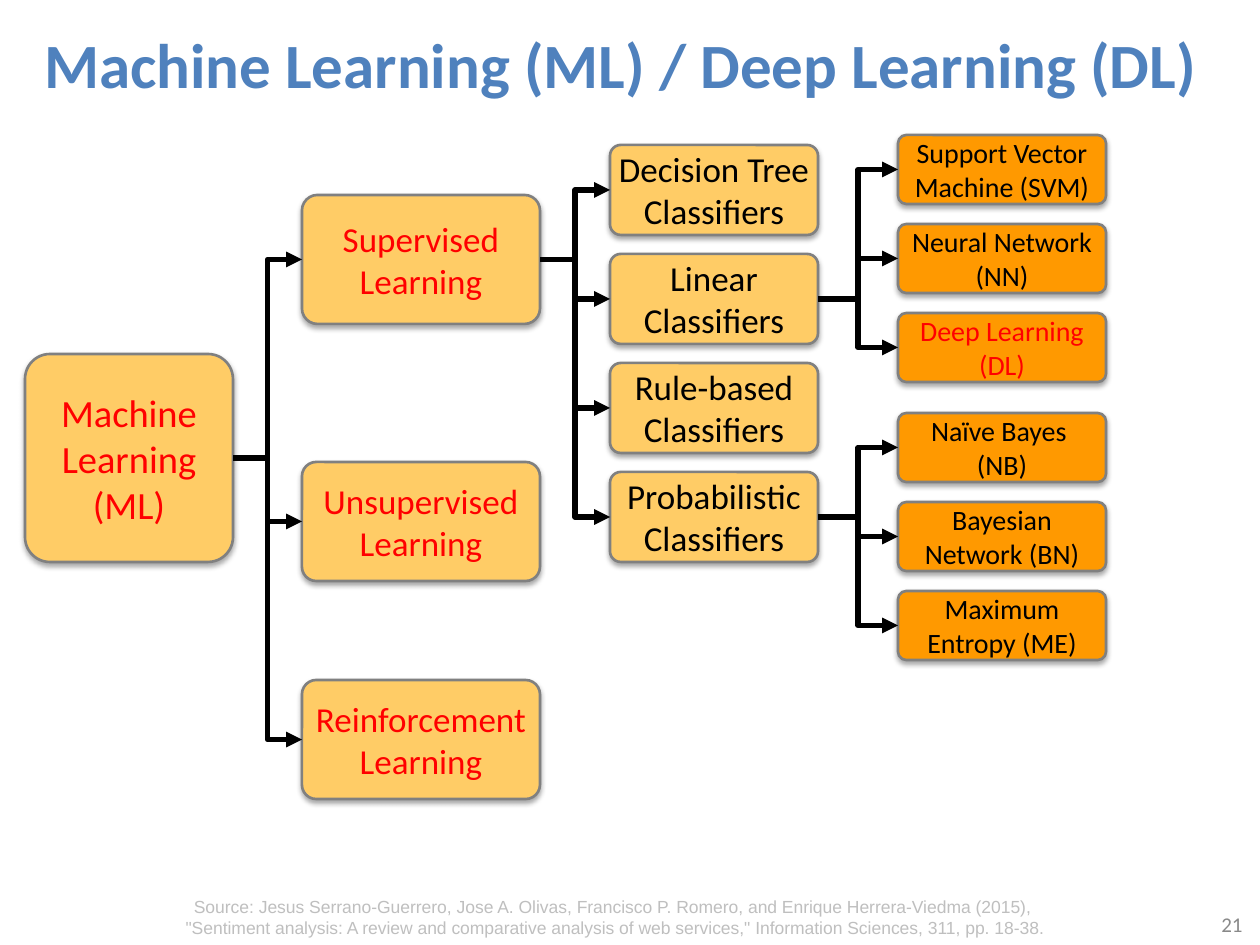
from copy import deepcopy

from lxml.etree import SubElement
from pptx import Presentation
from pptx.dml.color import RGBColor
from pptx.enum.shapes import MSO_CONNECTOR, MSO_SHAPE
from pptx.enum.text import MSO_ANCHOR, MSO_AUTO_SIZE, PP_ALIGN
from pptx.oxml.ns import qn
from pptx.util import Emu, Pt

EMU_PER_PX = 914400 / 126
LEFT_SITE, RIGHT_SITE = 1, 3
BLACK, RED, GRAY = "000000", "FF0000", "808080"
YELLOW, ORANGE = "FFCC66", "FF9900"

# Format of the boxes in each column of the tree
ROOT = dict(left=25, width=208, height=208, fill=YELLOW, size=22, color=RED)
KIND = dict(left=302, width=238, height=119, fill=YELLOW, size=20, color=RED)
CLASSIFIER = dict(left=610, width=208, height=90, fill=YELLOW, size=20, color=BLACK)
METHOD = dict(left=898, width=208, height=69, fill=ORANGE, size=16, color=BLACK)

CLASSIFIERS = ["Decision Tree Classifiers", "Linear Classifiers",
               "Rule-based Classifiers", "Probabilistic Classifiers"]
LINEAR_METHODS = ["Support Vector Machine (SVM)", "Neural Network (NN)",
                  "Deep Learning (DL)"]
PROBABILISTIC_METHODS = ["Naïve Bayes \v(NB)", "Bayesian Network (BN)",
                         "Maximum Entropy (ME)"]
SOURCE = ("Source: Jesus Serrano-Guerrero, Jose A. Olivas, Francisco P. Romero, "
          "and Enrique Herrera-Viedma (2015), \v"
          "\"Sentiment analysis: A review and comparative analysis of web services,\" "
          "Information Sciences, 311, pp. 18-38.")


def px(length):
    return Emu(round(length * EMU_PER_PX))


def rgb(color):
    return RGBColor.from_string(color)


def write_text(shape, text, *, size, color, font="Calibri", bold=False,
               align=PP_ALIGN.CENTER, anchor=MSO_ANCHOR.MIDDLE, inset=None):
    """Fill a shape with text; \\n starts a paragraph and \\v breaks a line."""
    frame = shape.text_frame
    frame.text = text
    frame.word_wrap = True
    frame.auto_size = MSO_AUTO_SIZE.NONE
    frame.vertical_anchor = anchor
    if inset is not None:
        frame.margin_left = frame.margin_right = px(inset)
        frame.margin_top = frame.margin_bottom = px(inset)
    for paragraph in frame.paragraphs:
        paragraph.alignment = align
        for run in paragraph.runs:
            run.font.name = font
            run.font.size = Pt(size)
            run.font.bold = bold
            run.font.color.rgb = rgb(color)
        for line_break in paragraph._p.findall(qn("a:br")):
            line_break.append(deepcopy(paragraph.runs[0]._r.rPr))


def add_title(slide, text):
    title = slide.shapes.title
    title.left, title.top, title.width, title.height = map(px, (25, 11, 1191, 105))
    write_text(title, text, size=36, color="4F81BD", bold=True)


def add_label(slide, text, left, top, width, height, **text_format):
    label = slide.shapes.add_textbox(px(left), px(top), px(width), px(height))
    write_text(label, text, **text_format)


def add_soft_shadow(shape):
    shape.shadow.inherit = False
    effects = shape._element.spPr.find(qn("a:effectLst"))
    shadow = SubElement(effects, qn("a:outerShdw"), blurRad=str(Pt(3.1)),
                        dist=str(Pt(1.8)), dir="5400000", rotWithShape="0")
    color = SubElement(shadow, qn("a:srgbClr"), val=BLACK)
    SubElement(color, qn("a:alpha"), val="35000")


def add_box(slide, text, top, *, left, width, height, fill, size, color):
    box = slide.shapes.add_shape(MSO_SHAPE.ROUNDED_RECTANGLE,
                                 px(left), px(top), px(width), px(height))
    box.adjustments[0] = 0.12
    box.fill.solid()
    box.fill.fore_color.rgb = rgb(fill)
    box.line.color.rgb = rgb(GRAY)
    box.line.width = Pt(1.5)
    add_soft_shadow(box)
    write_text(box, text, size=size, color=color, inset=0)
    return box


def add_stack(slide, texts, top, step, style, highlight=None):
    """Add evenly spaced boxes in one column, the highlighted one in red."""
    return [
        add_box(slide, text, top + index * step,
                **(style | {"color": RED} if text == highlight else style))
        for index, text in enumerate(texts)
    ]


def add_branches(slide, parent, children):
    """Draw an elbow arrow from the parent to each child."""
    for child in children:
        arrow = slide.shapes.add_connector(MSO_CONNECTOR.ELBOW, 0, 0, 0, 0)
        arrow.begin_connect(parent, RIGHT_SITE)
        arrow.end_connect(child, LEFT_SITE)
        arrow.line.color.rgb = rgb(BLACK)
        arrow.line.width = Pt(3)
        SubElement(arrow.line._get_or_add_ln(), qn("a:tailEnd"), type="triangle")
        SubElement(arrow._element.spPr, qn("a:effectLst"))


def add_learning_tree(slide):
    root = add_box(slide, "Machine Learning\n(ML)", 354, **ROOT)
    supervised = add_box(slide, "Supervised Learning", 195, **(KIND | {"height": 129}))
    unsupervised = add_box(slide, "Unsupervised Learning", 462, **KIND)
    reinforcement = add_box(slide, "Reinforcement Learning", 680, **KIND)
    classifiers = add_stack(slide, CLASSIFIERS, 145, 109, CLASSIFIER)
    linear_methods = add_stack(slide, LINEAR_METHODS, 135, 89, METHOD,
                               highlight="Deep Learning (DL)")
    probabilistic_methods = add_stack(slide, PROBABILISTIC_METHODS, 413, 89, METHOD)

    _, linear, _, probabilistic = classifiers
    add_branches(slide, root, [supervised, unsupervised, reinforcement])
    add_branches(slide, supervised, classifiers)
    add_branches(slide, linear, linear_methods)
    add_branches(slide, probabilistic, probabilistic_methods)


def main():
    presentation = Presentation()
    presentation.slide_width, presentation.slide_height = px(1260), px(945)
    slide = presentation.slides.add_slide(presentation.slide_layouts[5])
    add_title(slide, "Machine Learning (ML) / Deep Learning (DL)")
    add_label(slide, "21", 961, 899, 294, 50, size=12, color="898989",
              align=PP_ALIGN.RIGHT)
    add_label(slide, SOURCE, 74, 890, 1081, 55, size=10, color="BFBFBF",
              font="Arial", anchor=MSO_ANCHOR.TOP)
    add_learning_tree(slide)
    presentation.save("out.pptx")


if __name__ == "__main__":
    main()
